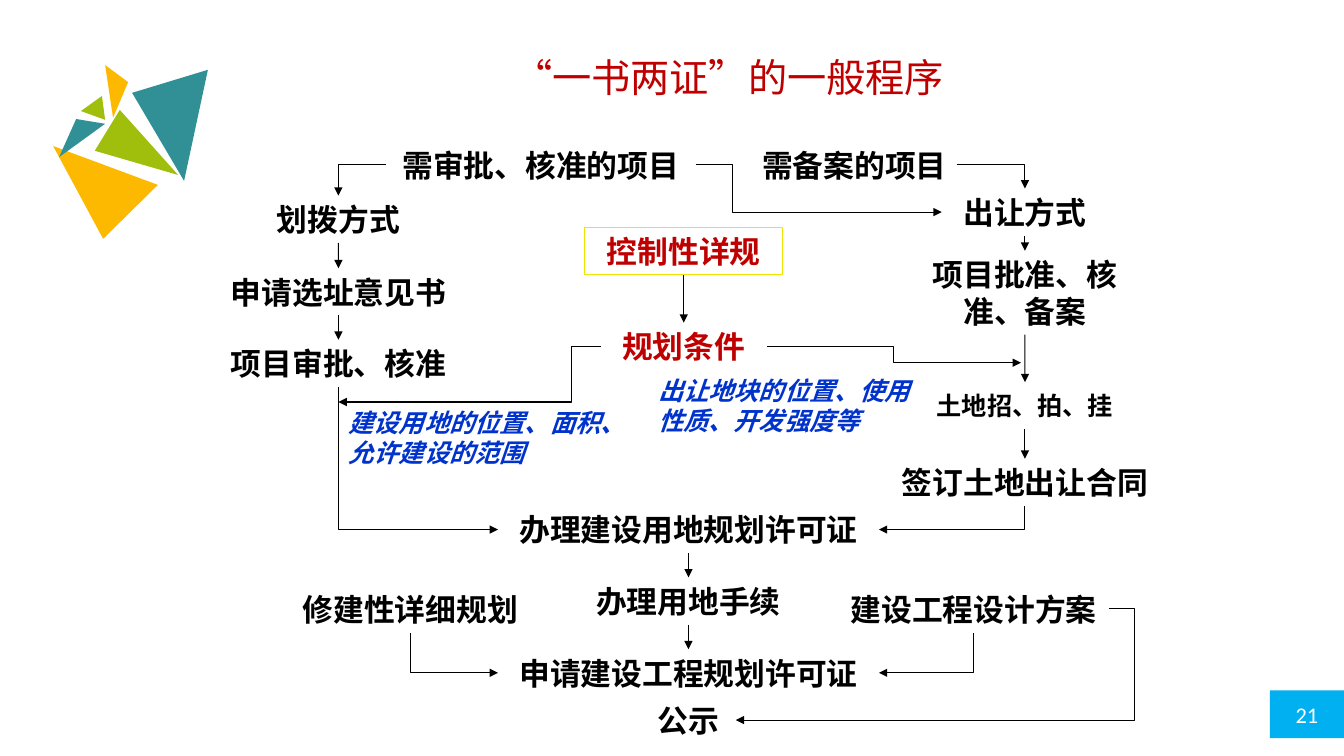
from dataclasses import dataclass

from lxml import etree
from pptx import Presentation
from pptx.dml.color import RGBColor
from pptx.enum.shapes import MSO_CONNECTOR, MSO_SHAPE
from pptx.enum.text import MSO_ANCHOR, PP_ALIGN
from pptx.oxml.ns import qn
from pptx.util import Cm, Pt

STRAIGHT, ELBOW = MSO_CONNECTOR.STRAIGHT, MSO_CONNECTOR.ELBOW
RECTANGLE = MSO_SHAPE.RECTANGLE
MIDDLE = MSO_ANCHOR.MIDDLE
CENTER, LEFT = PP_ALIGN.CENTER, PP_ALIGN.LEFT
TOP_SIDE, LEFT_SIDE, BOTTOM_SIDE, RIGHT_SIDE = range(4)


@dataclass(frozen=True)
class Theme:
    black: str = "000000"
    white: str = "FFFFFF"
    red: str = "C00000"
    blue: str = "0033CC"
    yellow: str = "F0E500"
    sky: str = "00B0F0"
    teal: str = "319095"
    green: str = "A0BF0D"
    orange: str = "FDB900"
    latin: str = "Calibri"
    chinese: str = "Noto Sans CJK KR"
    title_size: int = 28
    step_size: int = 22
    note_size: int = 18
    page_size: int = 16
    line_width: float = 0.75
    leading: float = 1.2


THEME = Theme()

TITLE = "“一书两证”的一般程序"
TITLE_BOX = (6.93, 1.14, 22.86, 1.57)
PAGE_NUMBER = "21"
PAGE_BOX = (32.0, 17.4, 1.87, 1.2)

LEFT_X, MID_X, RIGHT_X, PLAN_X = 8.53, 17.35, 25.83, 17.23
STEP_HEIGHT = 1.19

STEP = {"size": THEME.step_size, "color": THEME.black, "bold": True}
KEY_STEP = {**STEP, "color": THEME.red}
SMALL_STEP = {**STEP, "size": THEME.note_size}
NOTE = {**SMALL_STEP, "color": THEME.blue, "italic": True}

STEPS = [
    ("需审批、核准的项目", 13.63, 3.56, 7.8, STEP),
    ("需备案的项目", 21.53, 3.56, 5.16, STEP),
    ("划拨方式", LEFT_X, 4.93, 4.01, STEP),
    ("申请选址意见书", LEFT_X, 6.76, 6.4, STEP),
    ("项目审批、核准", LEFT_X, 8.56, 6.4, STEP),
    ("出让方式", RIGHT_X, 4.75, 4.19, STEP),
    ("土地招、拍、挂", RIGHT_X, 9.63, 5.0, SMALL_STEP),
    ("签订土地出让合同", RIGHT_X, 11.56, 7.01, STEP),
    ("控制性详规", PLAN_X, 5.74, 5.0, KEY_STEP),
    ("规划条件", PLAN_X, 8.13, 4.19, KEY_STEP),
    ("办理建设用地规划许可证", MID_X, 12.75, 9.6, STEP),
    ("办理用地手续", MID_X, 14.55, 6.4, STEP),
    ("申请建设工程规划许可证", MID_X, 16.36, 9.6, STEP),
    ("公示", MID_X, 17.55, 2.39, STEP),
    ("修建性详细规划", 10.34, 14.75, 6.81, STEP),
    ("建设工程设计方案", 24.54, 14.75, 6.81, STEP),
]
FRAMED_STEP = "控制性详规"
WRAPPED = [
    ("项目批准、核准、备案", RIGHT_X, 6.32, 5.82, 2.11, STEP, CENTER),
    ("建设用地的位置、面积、允许建设的范围", 12.04, 10.13, 7.01, 1.8, NOTE, LEFT),
    ("出让地块的位置、使用性质、开发强度等", 19.94, 9.32, 7.21, 1.8, NOTE, LEFT),
]

FLOWS = [
    ["划拨方式", "申请选址意见书", "项目审批、核准"],
    ["出让方式", "项目批准、核准、备案", "土地招、拍、挂", "签订土地出让合同"],
    ["控制性详规", "规划条件"],
    ["办理建设用地规划许可证", "办理用地手续", "申请建设工程规划许可证"],
]
ACROSS_THEN_DOWN = [
    ("需审批、核准的项目", LEFT_SIDE, "划拨方式"),
    ("需备案的项目", RIGHT_SIDE, "出让方式"),
]
DOWN_THEN_ACROSS = [
    ("项目审批、核准", "办理建设用地规划许可证", LEFT_SIDE),
    ("签订土地出让合同", "办理建设用地规划许可证", RIGHT_SIDE),
    ("修建性详细规划", "申请建设工程规划许可证", LEFT_SIDE),
    ("建设工程设计方案", "申请建设工程规划许可证", RIGHT_SIDE),
]
STEPPED = [
    ("需审批、核准的项目", RIGHT_SIDE, ("出让方式", LEFT_SIDE), 18.45),
    ("规划条件", RIGHT_SIDE, (25.73, 9.14), 22.53),
    ("规划条件", LEFT_SIDE, (LEFT_X, 10.13), 14.4),
    ("建设工程设计方案", RIGHT_SIDE, ("公示", RIGHT_SIDE), 28.58),
]

TRIANGLES = [
    (THEME.teal, [(3.33, 2.34), (5.24, 1.76), (4.64, 4.56)]),
    (THEME.green, [(2.39, 3.8), (3.02, 2.77), (4.49, 4.41)]),
    (THEME.orange, [(1.34, 3.68), (3.98, 4.66), (2.6, 6.02)]),
    (THEME.teal, [(1.92, 3.0), (2.65, 3.12), (1.49, 3.96)]),
    (THEME.green, [(2.04, 2.8), (2.57, 2.42), (2.65, 3.02)]),
    (THEME.orange, [(2.65, 1.64), (3.23, 2.07), (2.85, 2.97)]),
]


def rgb(color):
    return RGBColor.from_string(color)


def cm(values):
    return [Cm(value) for value in values]


def write(shape, words, look, align=CENTER, wrap=True):
    frame = shape.text_frame
    for name, value in {"word_wrap": wrap, "vertical_anchor": MIDDLE}.items():
        setattr(frame, name, value)
    paragraph = frame.paragraphs[0]
    spacing = {"alignment": align, "line_spacing": Pt(look["size"] * THEME.leading)}
    for name, value in spacing.items():
        setattr(paragraph, name, value)
    run = paragraph.add_run()
    run.text = words
    font = {
        "name": look.get("face", THEME.chinese),
        "size": Pt(look["size"]),
        "bold": look.get("bold", False),
        "italic": look.get("italic", False),
    }
    for name, value in font.items():
        setattr(run.font, name, value)
    run.font.color.rgb = rgb(look["color"])
    east_asian = etree.Element(qn("a:ea"), typeface=THEME.chinese)
    run.font._element.find(qn("a:latin")).addnext(east_asian)


def paint(shape, color):
    shape.shadow.inherit = False
    shape.fill.solid()
    shape.fill.fore_color.rgb = rgb(color)
    shape.line.fill.background()


def side_point(box, side):
    middle_x, middle_y = box.left + box.width // 2, box.top + box.height // 2
    return {
        TOP_SIDE: (middle_x, box.top),
        LEFT_SIDE: (box.left, middle_y),
        BOTTOM_SIDE: (middle_x, box.top + box.height),
        RIGHT_SIDE: (box.left + box.width, middle_y),
    }[side]


def add_arrow(shapes, kind, begin, end, arrowhead="a:tailEnd"):
    arrow = shapes.add_connector(kind, *begin, *end)
    arrow.line.color.rgb = rgb(THEME.black)
    arrow.line.width = Pt(THEME.line_width)
    etree.SubElement(arrow.line._get_or_add_ln(), qn(arrowhead), type="triangle")
    etree.SubElement(arrow._element.spPr, qn("a:effectLst"))
    return arrow


def add_elbow(shapes, begin, end, turn_x, arrowhead="a:tailEnd"):
    elbow = add_arrow(shapes, ELBOW, begin, end, arrowhead)
    share = round(100000 * (turn_x - begin[0]) / (end[0] - begin[0]))
    guides = elbow._element.spPr.find(qn("a:prstGeom")).get_or_add_avLst()
    etree.SubElement(guides, qn("a:gd"), name="adj1", fmla=f"val {share}")


def add_steps(shapes):
    boxes = {}
    single = [(*step[:4], STEP_HEIGHT, step[4], CENTER) for step in STEPS]
    for words, center_x, top, width, height, look, align in single + WRAPPED:
        box = shapes.add_textbox(*cm((center_x - width / 2, top, width, height)))
        write(box, words, look, align, wrap=height > STEP_HEIGHT)
        boxes[words] = box
    frame_line = boxes[FRAMED_STEP].line
    frame_line.color.rgb = rgb(THEME.yellow)
    frame_line.width = Pt(THEME.line_width)
    return boxes


def add_arrows(shapes, boxes):
    for flow in FLOWS:
        for source, target in zip(flow, flow[1:]):
            begin = side_point(boxes[source], BOTTOM_SIDE)
            arrow = add_arrow(shapes, STRAIGHT, begin, side_point(boxes[target], TOP_SIDE))
            arrow.begin_connect(boxes[source], BOTTOM_SIDE)
            arrow.end_connect(boxes[target], TOP_SIDE)
    for source, side, target in ACROSS_THEN_DOWN:
        end = side_point(boxes[target], TOP_SIDE)
        add_elbow(shapes, side_point(boxes[source], side), end, end[0])
    for source, target, side in DOWN_THEN_ACROSS:
        corner = side_point(boxes[source], BOTTOM_SIDE)
        add_elbow(shapes, side_point(boxes[target], side), corner, corner[0], "a:headEnd")
    for source, side, goal, turn_x in STEPPED:
        end = side_point(boxes[goal[0]], goal[1]) if goal[0] in boxes else cm(goal)
        add_elbow(shapes, side_point(boxes[source], side), end, Cm(turn_x))


def main():
    deck = Presentation()
    deck.slide_width, deck.slide_height = Cm(33.87), Cm(19.05)
    slide = deck.slides.add_slide(deck.slide_layouts[5])
    shapes = slide.shapes

    title = shapes.title
    for name, value in zip(("left", "top", "width", "height"), cm(TITLE_BOX)):
        setattr(title, name, value)
    write(title, TITLE, {"size": THEME.title_size, "color": THEME.red, "face": THEME.latin})

    page = shapes.add_shape(RECTANGLE, *cm(PAGE_BOX))
    paint(page, THEME.sky)
    write(page, PAGE_NUMBER, {"size": THEME.page_size, "color": THEME.white, "face": THEME.latin})

    for color, corners in TRIANGLES:
        first, *others = [cm(corner) for corner in corners]
        outline = shapes.build_freeform(*first)
        outline.add_line_segments(others, close=True)
        paint(outline.convert_to_shape(), color)

    add_arrows(shapes, add_steps(shapes))
    deck.save("out.pptx")


if __name__ == "__main__":
    main()
